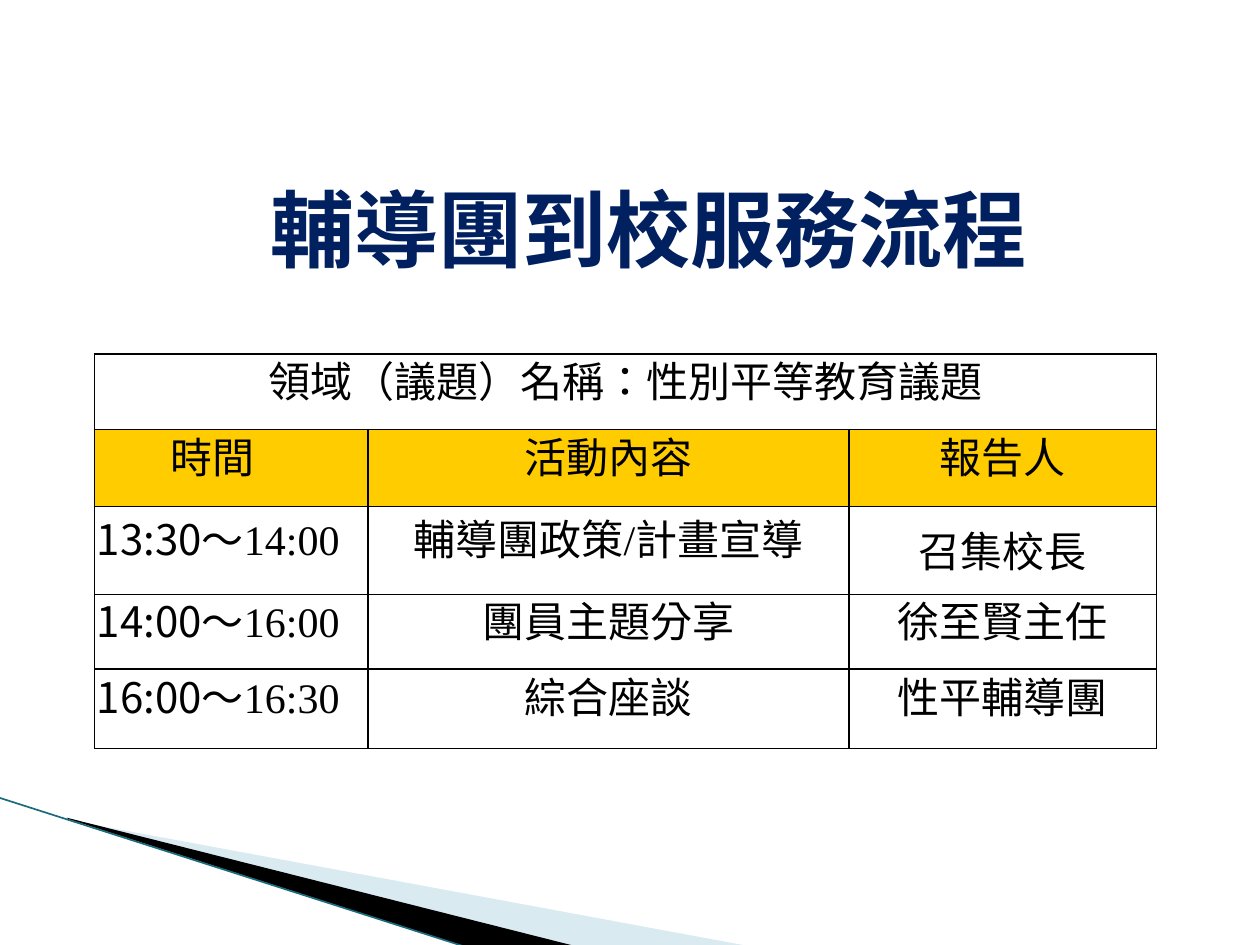
from dataclasses import dataclass

from lxml import etree
from pptx import Presentation
from pptx import util as u
from pptx.dml.color import RGBColor
from pptx.enum import shapes, text
from pptx.oxml import ns


@dataclass(frozen=True)
class Theme:
    navy: str = "002060"
    black: str = "000000"
    gold: str = "FFCC00"
    pale_blue: str = "A0CBDC"
    teal: str = "1A6B7C"
    sans: str = "Noto Sans CJK SC"
    serif: str = "Times New Roman"
    title_size: int = 48
    table_size: int = 24


T = Theme()
CENTER = text.PP_ALIGN.CENTER
LEFT = text.PP_ALIGN.LEFT
COLS = [2.17, 3.82, 2.44]
ROWS = [0.6, 0.61, 0.7, 0.59, 0.63]
HEADING = "領域（議題）名稱：性別平等教育議題"
HEADERS = ["時間", "活動內容", "報告人"]
SCHEDULE = [
    ("13:30", "～14:00", "輔導團政策/計畫宣導", "召集校長"),
    ("14:00", "～16:00", "團員主題分享", "徐至賢主任"),
    ("16:00", "～16:30", "綜合座談", "性平輔導團"),
]


def add_child(parent, tag, **attrs):
    return etree.SubElement(parent, ns.qn(tag), attrs)


def style_paragraph(p, size, color, font, bold=False):
    p.font.size = u.Pt(size)
    p.font.bold = bold
    p.font.color.rgb = RGBColor.from_string(color)
    p.font.name = font
    # East Asian characters use the sans face
    latin = p._p.pPr.find(ns.qn("a:defRPr")).find(ns.qn("a:latin"))
    ea = etree.Element(ns.qn("a:ea"), typeface=T.sans)
    latin.addnext(ea)


def add_wedge(s, points, color, alpha=None):
    corners = [(u.Inches(x), u.Inches(y)) for x, y in points]
    builder = s.shapes.build_freeform(*corners[0])
    builder.add_line_segments(corners[1:], close=True)
    sp = builder.convert_to_shape()
    sp.shadow.inherit = False
    sp.fill.solid()
    sp.fill.fore_color.rgb = RGBColor.from_string(color)
    sp.line.fill.background()
    if alpha is not None:
        clr = sp._element.spPr.find(ns.qn("a:solidFill"))[0]
        add_child(clr, "a:alpha", val=str(alpha * 1000))


def add_line(s, start, end, color, width):
    x1, y1, x2, y2 = map(u.Inches, (*start, *end))
    line = s.shapes.add_connector(shapes.MSO_CONNECTOR.STRAIGHT, x1, y1, x2, y2)
    line.line.color.rgb = RGBColor.from_string(color)
    line.line.width = u.Pt(width)
    add_child(line._element.spPr, "a:effectLst")


def add_title(s, words):
    box = s.shapes.add_textbox(u.Inches(0.3), u.Inches(1.35), u.Inches(9.69), u.Inches(0.91))
    tf = box.text_frame
    tf.word_wrap = True
    tf.vertical_anchor = text.MSO_ANCHOR.MIDDLE
    p = tf.paragraphs[0]
    p.text = words
    p.alignment = CENTER
    style_paragraph(p, T.title_size, T.navy, T.sans, bold=True)


def style_cell(cell, fill=None):
    cell.margin_left = cell.margin_right = u.Inches(0.02)
    cell.margin_top = cell.margin_bottom = 0
    cell.vertical_anchor = text.MSO_ANCHOR.MIDDLE
    for side in "LRTB":
        ln = add_child(cell._tc.get_or_add_tcPr(), f"a:ln{side}", w=str(u.Pt(1)))
        add_child(add_child(ln, "a:solidFill"), "a:srgbClr", val=T.black)
    if fill:
        cell.fill.solid()
        cell.fill.fore_color.rgb = RGBColor.from_string(fill)
    else:
        cell.fill.background()


def write_cell(cell, runs, align=CENTER, spacing=20, margin=0, indent=0):
    """Each run is a pair of words and a font, or None for the table font."""
    p = cell.text_frame.paragraphs[0]
    for words, font in runs:
        r = p.add_run()
        r.text = words
        # Traditional Chinese centres its punctuation
        r._r.get_or_add_rPr().set("lang", "zh-TW")
        if font:
            r.font.name = font
    p.alignment = align
    p.line_spacing = u.Pt(spacing)
    pPr = p._p.get_or_add_pPr()
    pPr.set("marL", str(u.Inches(margin)))
    pPr.set("indent", str(u.Inches(indent)))
    style_paragraph(p, T.table_size, T.black, T.serif)


def add_schedule(s):
    frame = s.shapes.add_table(len(ROWS), len(COLS), u.Inches(0.75), u.Inches(2.81),
                               u.Inches(sum(COLS)), u.Inches(sum(ROWS)))
    table = frame.table
    table.first_row = table.horz_banding = False
    for col, width in zip(table.columns, COLS):
        col.width = u.Inches(width)
    for i, (row, height) in enumerate(zip(table.rows, ROWS)):
        row.height = u.Inches(height)
        for cell in row.cells:
            style_cell(cell, T.gold if i == 1 else None)

    # Heading across all columns, then the column headers
    table.cell(0, 0).merge(table.cell(0, len(COLS) - 1))
    write_cell(table.cell(0, 0), [(HEADING, None)])
    for j, words in enumerate(HEADERS):
        first = j == 0
        write_cell(table.cell(1, j), [(words, None)], LEFT if first else CENTER,
                   indent=0.58 if first else 0)

    # Sessions
    for i, (start, end, activity, speaker) in enumerate(SCHEDULE, 2):
        write_cell(table.cell(i, 0), [(start, T.sans), (end, T.serif)], LEFT)
        write_cell(table.cell(i, 1), [(activity, None)])
        hang = 0.17 if i == 3 else 0
        write_cell(table.cell(i, 2), [(speaker, None)], spacing=33 if i == 2 else 20,
                   margin=hang, indent=-hang)


def main():
    prs = Presentation()
    prs.slide_width, prs.slide_height = u.Inches(10), u.Inches(7.5)
    s = prs.slides.add_slide(prs.slide_layouts[6])

    # Corner decoration
    add_wedge(s, [(0.55, 6.51), (5.95, 7.51), (4.56, 7.51), (0.55, 6.5)], T.pale_blue, 40)
    add_wedge(s, [(0.53, 6.49), (4.57, 7.51), (3.72, 7.52), (0.54, 6.5)], T.black)
    add_line(s, (-0.01, 6.33), (3.71, 7.52), T.teal, 0.95)

    # Title and schedule
    add_title(s, "輔導團到校服務流程")
    add_schedule(s)
    prs.save("out.pptx")


if __name__ == "__main__":
    main()
